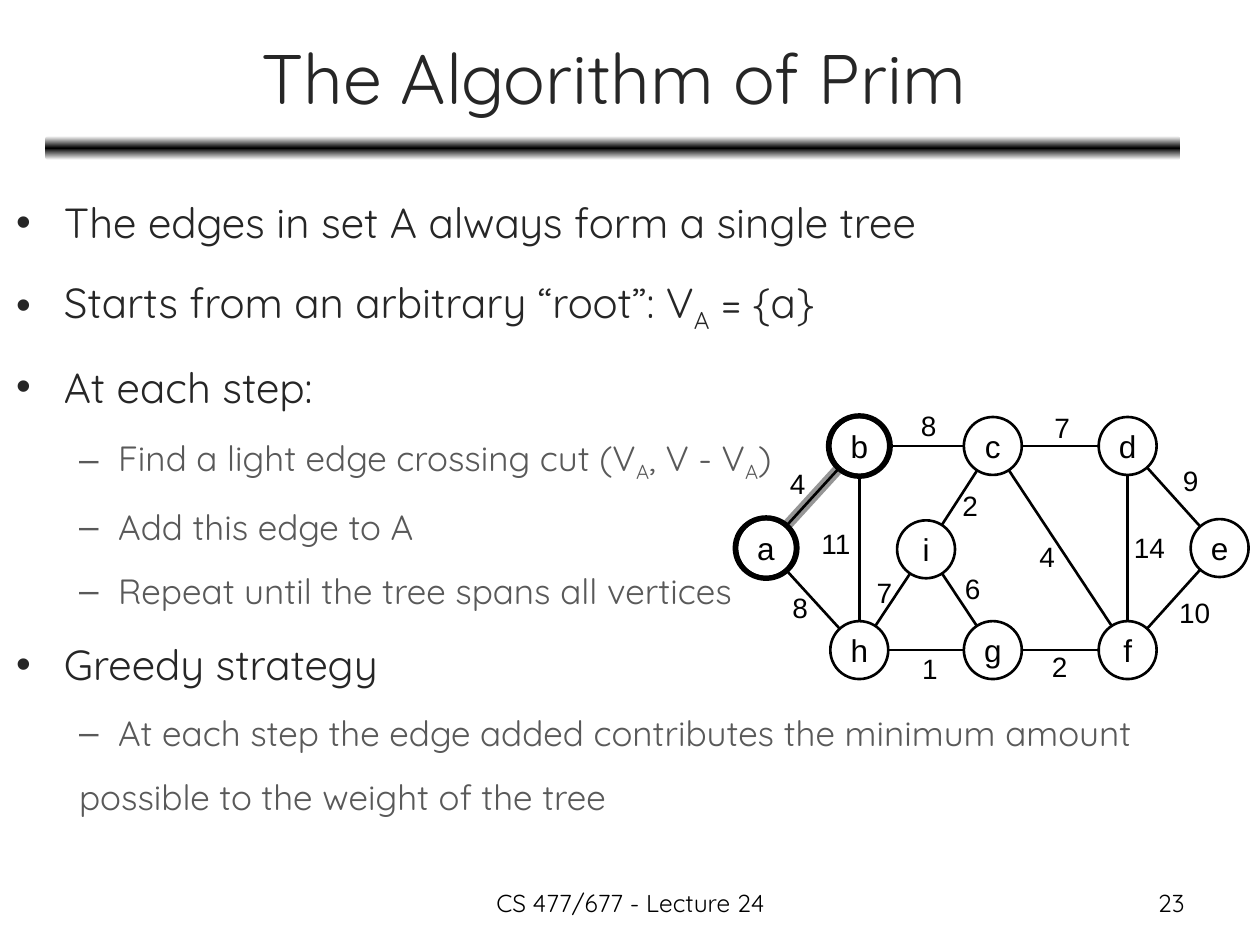
from copy import deepcopy
from math import hypot

from lxml.etree import SubElement
from pptx import Presentation
from pptx.dml.color import RGBColor
from pptx.enum.shapes import MSO_CONNECTOR, MSO_SHAPE
from pptx.enum.text import MSO_ANCHOR, PP_ALIGN
from pptx.oxml.ns import qn
from pptx.util import Inches, Pt

BLACK = RGBColor(0x00, 0x00, 0x00)
WHITE = RGBColor(0xFF, 0xFF, 0xFF)
GREY = RGBColor(0x96, 0x96, 0x96)
DARK_TEXT = RGBColor(0x26, 0x26, 0x26)
LIGHT_TEXT = RGBColor(0x59, 0x59, 0x59)

TITLE = {"name": "Quicksand", "size": Pt(40), "color": DARK_TEXT}
FOOTER = {"name": "Quicksand", "size": Pt(14), "color": BLACK}
NODE = {"name": "Arial", "size": Pt(18), "color": BLACK}
WEIGHT = {"name": "Arial", "size": Pt(16), "color": BLACK}
LEVELS = [
    {"font": {"name": "Quicksand", "size": Pt(24), "color": DARK_TEXT},
     "bullet": "•", "margin": 0.38, "indent": -0.38, "before": Pt(4)},
    {"font": {"name": "Quicksand", "size": Pt(20), "color": LIGHT_TEXT},
     "bullet": "–", "margin": 0.81, "indent": -0.31, "before": Pt(3)},
]

BODY = [
    (0, True, ["The edges in set A always form a single tree"]),
    (0, True, ["Starts from an arbitrary “root”: V", "A", " = {a}"]),
    (0, True, ["At each step:"]),
    (1, True, ["Find a light edge crossing cut (V", "A", ", V - V", "A", ")"]),
    (1, True, ["Add this edge to A"]),
    (1, True, ["Repeat until the tree spans all vertices"]),
    (0, True, ["Greedy strategy"]),
    (1, True, ["At each step the edge added contributes the minimum amount"]),
    (1, False, ["possible to the weight of the tree"]),
]

NODE_CENTERS = {
    "a": (0.25, 1.05), "b": (0.99, 0.24), "c": (2.05, 0.24),
    "d": (3.12, 0.24), "e": (3.85, 1.05), "h": (0.99, 1.86),
    "g": (2.05, 1.86), "f": (3.12, 1.86), "i": (1.52, 1.06),
}
EDGES = [
    ("a", "b", "4", 0.34, 0.35), ("b", "c", "8", 1.38, -0.11),
    ("c", "d", "7", 2.44, -0.09), ("a", "h", "8", 0.36, 1.34),
    ("b", "h", "11", 0.59, 0.83), ("h", "g", "1", 1.39, 1.82),
    ("g", "f", "2", 2.42, 1.81), ("h", "i", "7", 1.03, 1.22),
    ("i", "c", "2", 1.71, 0.53), ("c", "f", "4", 2.32, 0.93),
    ("d", "f", "14", 3.07, 0.86), ("d", "e", "9", 3.46, 0.33),
    ("f", "e", "10", 3.43, 1.38), ("i", "g", "6", 1.73, 1.19),
]
TREE_NODES = ["b", "a"]
TREE_EDGE = ("a", "b")
RADIUS = 0.23


def set_values(target, values):
    """Set each named attribute of the target."""
    for name, value in values.items():
        setattr(target, name, value)


def add_run(paragraph, text, font):
    """Add a run with the given font values."""
    run = paragraph.add_run()
    run.text = text
    set_values(run.font, {key: value for key, value in font.items() if key != "color"})
    run.font.color.rgb = font["color"]
    return run


def add_label(shapes, box, text, font, alignment, anchor=MSO_ANCHOR.TOP, wrap=True):
    """Place a one-paragraph text box."""
    frame = shapes.add_textbox(*map(Inches, box)).text_frame
    set_values(frame, {"word_wrap": wrap, "vertical_anchor": anchor})
    frame.paragraphs[0].alignment = alignment
    add_run(frame.paragraphs[0], text, font)


def add_ring(shapes, center, width, height, weight):
    """Draw an unfilled circle around a center."""
    x, y = center
    box = (x - width / 2, y - height / 2, width, height)
    ring = shapes.add_shape(MSO_SHAPE.OVAL, *map(Inches, box))
    ring.shadow.inherit = False
    ring.fill.background()
    ring.line.color.rgb = BLACK
    ring.line.width = Pt(weight)
    return ring


def add_edge(shapes, start, end, color, weight):
    """Draw a line between the rims of two circles."""
    (x1, y1), (x2, y2) = start, end
    share = RADIUS / hypot(x2 - x1, y2 - y1)
    dx, dy = (x2 - x1) * share, (y2 - y1) * share
    ends = map(Inches, (x1 + dx, y1 + dy, x2 - dx, y2 - dy))
    line = shapes.add_connector(MSO_CONNECTOR.STRAIGHT, *ends)
    line.line.color.rgb = color
    line.line.width = Pt(weight)
    SubElement(line._element.spPr, qn("a:effectLst"))


def add_header(slide, left, top, width):
    """Place the title and the gradient bar below it."""
    add_label(slide.shapes, (left, top, width, 0.99), "The Algorithm of Prim",
              TITLE, PP_ALIGN.CENTER, MSO_ANCHOR.MIDDLE)
    box = (left - 0.01, top + 0.97, width + 0.01, 0.19)
    bar = slide.shapes.add_shape(MSO_SHAPE.ROUNDED_RECTANGLE, *map(Inches, box))
    bar.shadow.inherit = False
    bar.line.fill.background()
    bar.fill.gradient()
    bar.fill.gradient_angle = 90
    stop_list = bar._element.spPr.find(".//" + qn("a:gsLst"))
    stop_list.append(deepcopy(stop_list[-1]))
    for stop, position, color in zip(
            bar.fill.gradient_stops, (0, 0.5, 1), (WHITE, BLACK, WHITE)):
        stop.position = position
        stop.color.rgb = color


def add_body(slide, box):
    """Place the bulleted text with its subscripts."""
    frame = slide.shapes.add_textbox(*map(Inches, box)).text_frame
    frame.word_wrap = True
    for index, (level, bulleted, texts) in enumerate(BODY):
        style = LEVELS[level]
        paragraph = frame.add_paragraph() if index else frame.paragraphs[0]
        set_values(paragraph, {"level": level, "line_spacing": 1.4,
                               "space_before": style["before"]})
        properties = paragraph._p.get_or_add_pPr()
        properties.set("marL", str(Inches(style["margin"])))
        properties.set("indent", str(Inches(style["indent"])))
        if bulleted:
            SubElement(properties, qn("a:buFont"), typeface="Arial")
            SubElement(properties, qn("a:buChar"), char=style["bullet"])
        else:
            SubElement(properties, qn("a:buNone"))
        for position, text in enumerate(texts):
            run = add_run(paragraph, text, style["font"])
            if position % 2:
                run._r.get_or_add_rPr().set("baseline", "-25000")


def add_graph(slide, left, top):
    """Draw the weighted graph and highlight the tree so far."""
    centers = {name: (left + x, top + y) for name, (x, y) in NODE_CENTERS.items()}
    add_edge(slide.shapes, *(centers[name] for name in TREE_EDGE), GREY, 6)
    shapes = slide.shapes.add_group_shape().shapes
    for name, center in centers.items():
        node = add_ring(shapes, center, 2 * RADIUS, 2 * RADIUS, 1.5)
        set_values(node.text_frame, {"word_wrap": False,
                                     "vertical_anchor": MSO_ANCHOR.MIDDLE})
        paragraph = node.text_frame.paragraphs[0]
        paragraph.alignment = PP_ALIGN.CENTER
        add_run(paragraph, name, NODE)
    for start, end, weight, x, y in EDGES:
        add_edge(shapes, centers[start], centers[end], BLACK, 1.5)
        box = (left + x, top + y, 0.19 + 0.13 * len(weight), 0.37)
        add_label(shapes, box, weight, WEIGHT, PP_ALIGN.LEFT, wrap=False)
    for name in TREE_NODES:
        add_ring(slide.shapes, centers[name], 0.49, 0.48, 3)


def add_footer(slide, top):
    """Place the lecture name and the page number."""
    add_label(slide.shapes, (3.42, top, 3.17, 0.35), "CS 477/677 - Lecture 24",
              FOOTER, PP_ALIGN.CENTER)
    add_label(slide.shapes, (7.17, top, 2.33, 0.35), "23", FOOTER, PP_ALIGN.RIGHT)


def main():
    """Build and save the slide."""
    presentation = Presentation()
    set_values(presentation, {"slide_width": Inches(10), "slide_height": Inches(7.5)})
    slide = presentation.slides.add_slide(presentation.slide_layouts[6])
    add_header(slide, 0.37, 0.11, 9)
    add_body(slide, (0.03, 1.35, 9.96, 5.55))
    add_graph(slide, 5.83, 3.3)
    add_footer(slide, 7)
    presentation.save("out.pptx")


if __name__ == "__main__":
    main()
